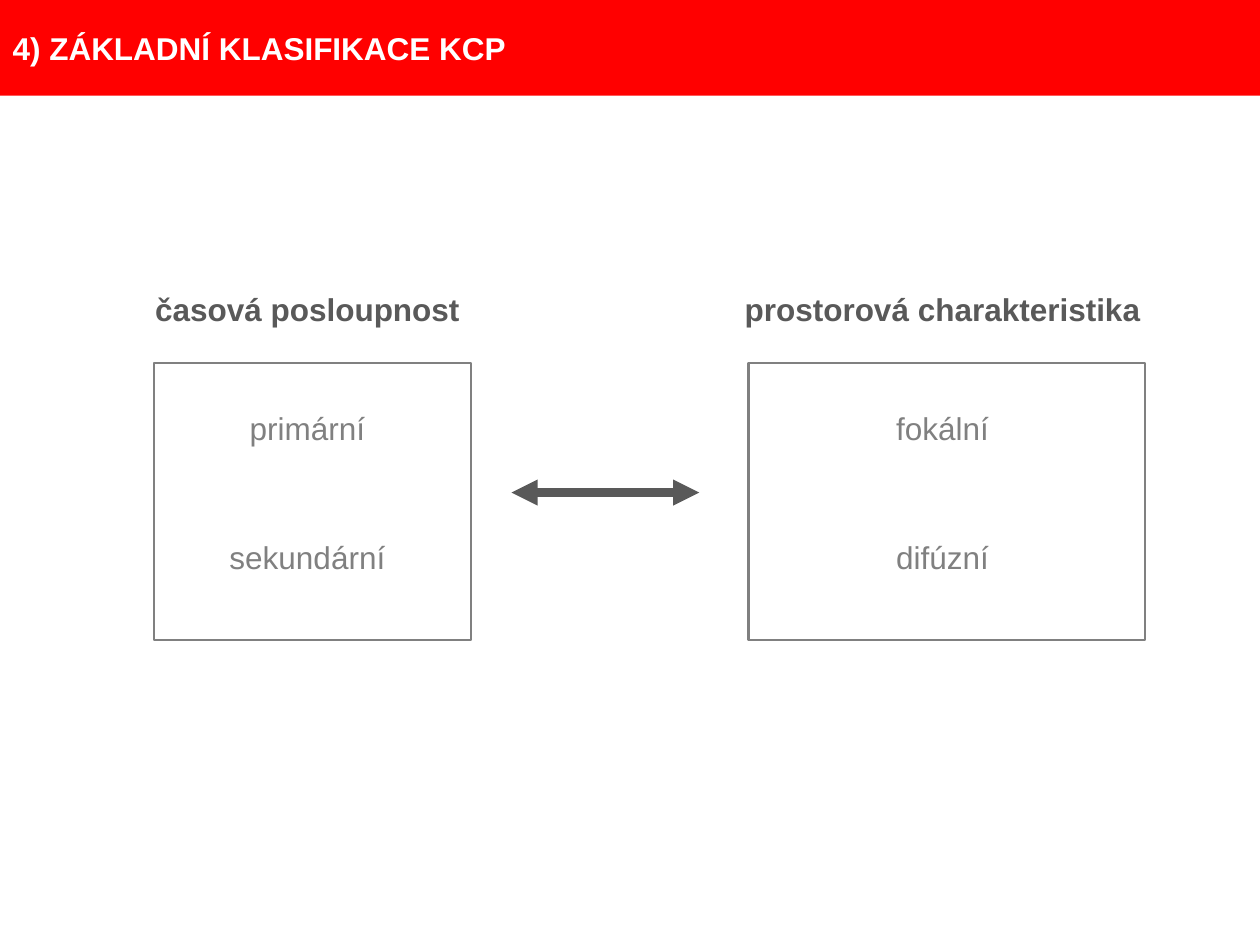
from lxml import etree
from pptx import Presentation
from pptx.dml.color import RGBColor
from pptx.enum import shapes, text
from pptx.oxml.ns import qn
from pptx.util import Pt

# Content
TITLE = "4) ZÁKLADNÍ KLASIFIKACE KCP"
COLUMNS = [
    # heading, classes, text centre, heading width, frame left, frame width
    ("časová posloupnost", ["primární", "sekundární"], 175.7, 198.7, 87.8, 181.4),
    ("prostorová charakteristika", ["fokální", "difúzní"], 538.6, 244, 427.7, 226.8),
]
RED, WHITE, DARK, GREY = "FF0000", "FFFFFF", "595959", "808080"

# Layout in points
WIDTH, HEIGHT, BAR_HEIGHT = 720, 540, 54.7
LABEL_WIDTH, LABEL_HEIGHT = 198.7, 33.8
HEADING_TOP, CLASS_TOP, CLASS_STEP = 162, 230.4, 73.4
FRAME_TOP, FRAME_HEIGHT = 207.4, 158.4
ARROW_LEFT, ARROW_RIGHT, ARROW_Y = 292.3, 399.6, 281.5


def color(hex_code):
    return RGBColor.from_string(hex_code)


def write(frame, words, hex_code, bold, align):
    frame.word_wrap = True
    frame.auto_size = text.MSO_AUTO_SIZE.NONE
    frame.text = words
    paragraph = frame.paragraphs[0]
    paragraph.alignment = align
    font = paragraph.runs[0].font
    font.name, font.size, font.bold = "Arial", Pt(18), bold
    font.color.rgb = color(hex_code)


def add_label(slide, words, center, top, width, hex_code, bold=False):
    label = slide.shapes.add_textbox(
        Pt(center - width / 2), Pt(top), Pt(width), Pt(LABEL_HEIGHT))
    write(label.text_frame, words, hex_code, bold, text.PP_ALIGN.CENTER)


def add_rectangle(slide, left, top, width, height):
    rectangle = slide.shapes.add_shape(
        shapes.MSO_SHAPE.RECTANGLE, Pt(left), Pt(top), Pt(width), Pt(height))
    rectangle.shadow.inherit = False
    return rectangle


def main():
    prs = Presentation()
    prs.slide_width, prs.slide_height = Pt(WIDTH), Pt(HEIGHT)
    slide = prs.slides.add_slide(prs.slide_layouts[5])

    # Title over a red bar
    bar = add_rectangle(slide, 0, 0, WIDTH, BAR_HEIGHT)
    bar.fill.solid()
    bar.fill.fore_color.rgb = color(RED)
    bar.line.fill.background()
    title = slide.shapes.title
    bar._element.addnext(title._element)
    title.left, title.top = Pt(0), Pt(0)
    title.width, title.height = Pt(WIDTH), Pt(BAR_HEIGHT)
    title.text_frame.vertical_anchor = text.MSO_ANCHOR.MIDDLE
    write(title.text_frame, TITLE, WHITE, True, text.PP_ALIGN.LEFT)

    # Headings, classes and their frames
    for heading, classes, center, heading_width, left, width in COLUMNS:
        add_label(slide, heading, center, HEADING_TOP, heading_width, DARK, True)
        for row, name in enumerate(classes):
            add_label(slide, name, center, CLASS_TOP + row * CLASS_STEP,
                      LABEL_WIDTH, GREY)
        frame = add_rectangle(slide, left, FRAME_TOP, width, FRAME_HEIGHT)
        frame.fill.background()
        frame.line.color.rgb = color(GREY)
        frame.line.width = Pt(1.25)

    # Double arrow between the frames
    arrow = slide.shapes.add_connector(
        shapes.MSO_CONNECTOR.STRAIGHT,
        Pt(ARROW_LEFT), Pt(ARROW_Y), Pt(ARROW_RIGHT), Pt(ARROW_Y))
    arrow.line.color.rgb = color(DARK)
    arrow.line.width = Pt(5)
    line = arrow.line._get_or_add_ln()
    for end in ("a:headEnd", "a:tailEnd"):
        etree.SubElement(line, qn(end), type="triangle")
    etree.SubElement(arrow._element.spPr, qn("a:effectLst"))

    prs.save("out.pptx")


if __name__ == "__main__":
    main()
